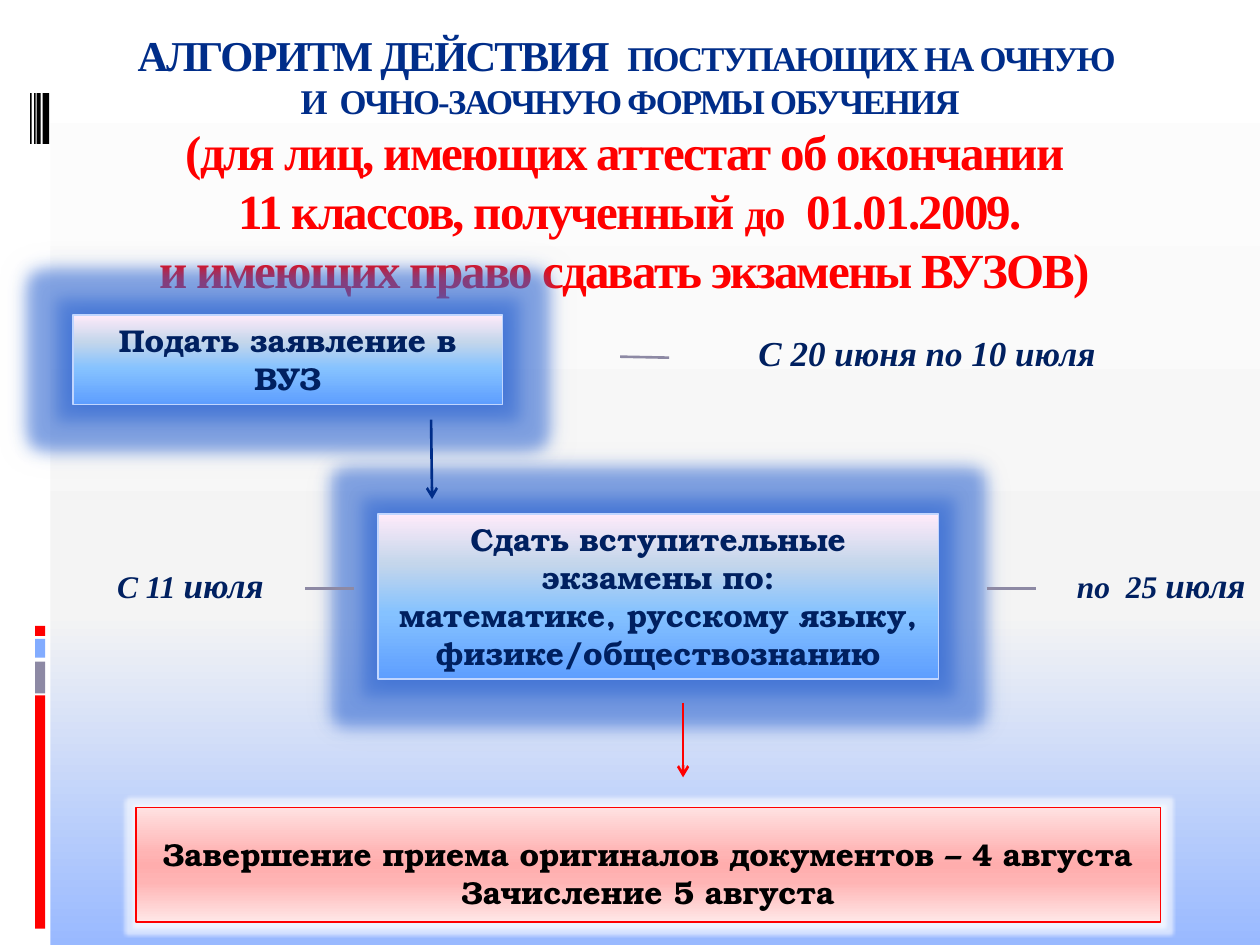
from typing import NamedTuple, Optional

from lxml import etree
from pptx import Presentation
from pptx import util as u
from pptx.dml.color import RGBColor
from pptx.enum import shapes, text
from pptx.oxml import ns

Cm, Pt = u.Cm, u.Pt
WHITE = RGBColor(0xFF, 0xFF, 0xFF)
BLACK = RGBColor(0, 0, 0)
RED = RGBColor(0xFF, 0, 0)
GREY = RGBColor(0x8D, 0x89, 0xA4)
SKY = RGBColor(0x82, 0xAC, 0xFF)
NAVY = RGBColor(0x00, 0x20, 0x60)
TITLE_BLUE = RGBColor(0x00, 0x2D, 0x89)
PALE_BLUE = RGBColor(0xC1, 0xD6, 0xFF)
GLOW_BLUE = RGBColor(0x33, 0x69, 0xD2)

PAGE_FADE = [(0, "FFFFFF"), (65, "F4F4F4"), (100, "99B9FF")]
BLUE_FADE = [(0, "FFEBFA"), (30, "C4D6EB"), (60, "85C2FF"), (100, "5E9EFF")]
RED_FADE = [(0, "FFE1E1"), (40, "FFB4B4"), (50, "FFADAD"), (65, "FFB4B4"), (100, "FFE7E7")]
SERIF, BOOK = "Times New Roman", "TeX Gyre Bonum"


class Span(NamedTuple):
    words: str
    size: float
    color: RGBColor = NAVY


class Bar(NamedTuple):
    left: float
    top: float
    width: float
    height: float
    color: RGBColor


class Step(NamedTuple):
    left: float
    top: float
    width: float
    height: float
    lines: list
    fade: list = BLUE_FADE
    border: RGBColor = PALE_BLUE
    ink: RGBColor = NAVY
    glow: tuple = (GLOW_BLUE, 0.62, 50)
    shade: Optional[RGBColor] = GLOW_BLUE
    top_inset: float = 0.1


class Link(NamedTuple):
    start: tuple
    end: tuple
    color: RGBColor = GREY
    arrow: bool = False


class Label(NamedTuple):
    left: float
    top: float
    width: float
    spans: list


BARS = [
    Bar(0, 0, 1.02, 19.05, WHITE),
    Bar(0.71, 14.02, 0.2, 4.7, RED),
    Bar(0.71, 13.34, 0.2, 0.64, GREY),
    Bar(0.71, 12.88, 0.2, 0.38, SKY),
    Bar(0.71, 12.62, 0.2, 0.2, RED),
] + [Bar(left, 1.88, width, 1.02, BLACK)
     for left, width in [(0.86, 0.13), (0.74, 0.08), (0.69, 0.03), (0.61, 0.03)]]

TITLE = [
    Span("АЛГОРИТМ ДЕЙСТВИЯ  ", 24.3, TITLE_BLUE),
    Span("ПОСТУПАЮЩИХ НА ОЧНУЮ \vИ  ОЧНО-ЗАОЧНУЮ ФОРМЫ ОБУЧЕНИЯ\v", 19.8, TITLE_BLUE),
    Span("(для лиц, имеющих аттестат об окончании \v11 классов, полученный ", 28, RED),
    Span("до", 24.3, RED),
    Span("  01.01.2009.\vи имеющих право сдавать экзамены ВУЗОВ) ", 28, RED),
]

STEPS = [
    Step(1.47, 6.35, 8.66, 1.8, ["Подать заявление в ВУЗ"]),
    Step(7.62, 10.36, 11.3, 3.33, ["Сдать вступительные экзамены по:",
                                   "математике, русскому языку, физике/обществознанию"]),
    Step(2.74, 16.28, 20.65, 2.31, ["Завершение приема оригиналов документов – 4 августа",
                                    "Зачисление 5 августа"],
         RED_FADE, RED, BLACK, (WHITE, 0.15, 60), None, 0.45),
]

LINKS = [
    Link((12.5, 7.19), (13.49, 7.21)),
    Link((8.69, 8.46), (8.71, 10.06), TITLE_BLUE, True),
    Link((6.15, 11.86), (7.14, 11.86)),
    Link((19.89, 11.86), (20.88, 11.86)),
    Link((13.77, 14.17), (13.77, 15.67), RED, True),
]

LABELS = [
    Label(15.04, 6.55, 7.54, [Span("С 20 июня по 10 июля", 20)]),
    Label(2.11, 11.23, 3.51, [Span("С 11 ", 18), Span("июля", 20)]),
    Label(21.46, 11.23, 3.94, [Span("по  25 ", 18), Span("июля", 20)]),
]


def add_node(parent, tag: str, **attributes):
    return etree.SubElement(parent, ns.qn(tag), {k: str(v) for k, v in attributes.items()})


def fade_fill(fill, holder, stops: list) -> None:
    """Give the holder element a top-to-bottom gradient with any number of stops."""
    fill.solid()
    solid = holder.find(ns.qn("a:solidFill"))
    gradient = etree.Element(ns.qn("a:gradFill"), rotWithShape="1")
    stop_list = add_node(gradient, "a:gsLst")
    for percent, color in stops:
        add_node(add_node(stop_list, "a:gs", pos=percent * 1000), "a:srgbClr", val=color)
    add_node(gradient, "a:lin", ang=5400000, scaled=0)
    holder.replace(solid, gradient)


def add_tint(effect, color: RGBColor, percent: int) -> None:
    tint = add_node(effect, "a:srgbClr", val=color)
    add_node(tint, "a:alpha", val=percent * 1000)


def write(para, spans: list, *, font: str, italic: bool = False,
          align=text.PP_ALIGN.LEFT, tracking: int = 0) -> None:
    para.alignment = align
    for item in spans:
        for index, piece in enumerate(item.words.split("\v")):
            if index:
                para.add_line_break()
            if not piece:
                continue
            span = para.add_run()
            span.text = piece
            span.font.name, span.font.size = font, Pt(item.size)
            span.font.bold, span.font.italic = True, italic
            span.font.color.rgb = item.color
            if tracking:
                span.font._element.set("spc", str(tracking))


def add_rectangle(page, left: float, top: float, width: float, height: float):
    box = page.shapes.add_shape(shapes.MSO_SHAPE.RECTANGLE,
                                Cm(left), Cm(top), Cm(width), Cm(height))
    box.shadow.inherit = False
    return box


def draw_bar(page, bar: Bar) -> None:
    box = add_rectangle(page, *bar[:4])
    box.fill.solid()
    box.fill.fore_color.rgb = bar.color
    box.line.fill.background()


def draw_title(page) -> None:
    box = page.shapes.add_textbox(0, Cm(0.58), Cm(25.4), Cm(5.6))
    frame = box.text_frame
    frame.word_wrap = True
    frame.margin_top = frame.margin_bottom = 0
    write(frame.paragraphs[0], TITLE, font=SERIF,
          align=text.PP_ALIGN.CENTER, tracking=-100)


def draw_step(page, step: Step) -> None:
    box = add_rectangle(page, *step[:4])
    properties = box._element.spPr
    fade_fill(box.fill, properties, step.fade)
    box.line.color.rgb = step.border
    box.line.width = Pt(0.75)
    effects = properties.find(ns.qn("a:effectLst"))
    color, radius, percent = step.glow
    add_tint(add_node(effects, "a:glow", rad=Cm(radius)), color, percent)
    if step.shade:
        add_tint(add_node(effects, "a:outerShdw", blurRad=Cm(0.4), dist=0), step.shade, 75)
    frame = box.text_frame
    frame.word_wrap = True
    frame.vertical_anchor = text.MSO_ANCHOR.MIDDLE
    frame.margin_top = Cm(step.top_inset)
    for index, line in enumerate(step.lines):
        para = frame.add_paragraph() if index else frame.paragraphs[0]
        write(para, [Span(line, 18, step.ink)], font=BOOK, align=text.PP_ALIGN.CENTER)


def draw_link(page, link: Link) -> None:
    line = page.shapes.add_connector(shapes.MSO_CONNECTOR.STRAIGHT,
                                     *map(Cm, link.start + link.end))
    line.line.color.rgb = link.color
    line.line.width = Pt(1.5)
    if link.arrow:
        add_node(line.line._get_or_add_ln(), "a:tailEnd", type="arrow")
    add_node(line._element.spPr, "a:effectLst")


def draw_label(page, label: Label) -> None:
    box = page.shapes.add_textbox(Cm(label.left), Cm(label.top), Cm(label.width), Cm(1.12))
    box.text_frame.word_wrap = False
    write(box.text_frame.paragraphs[0], label.spans, font=SERIF, italic=True)


def main() -> None:
    deck = Presentation()
    deck.slide_width, deck.slide_height = Cm(25.4), Cm(19.05)
    page = deck.slides.add_slide(deck.slide_layouts[6])
    backdrop = page.background.fill
    backdrop.solid()
    fade_fill(backdrop, page._element.cSld.find(".//" + ns.qn("p:bgPr")), PAGE_FADE)
    for bar in BARS:
        draw_bar(page, bar)
    draw_title(page)
    for step in STEPS:
        draw_step(page, step)
    for link in LINKS:
        draw_link(page, link)
    for label in LABELS:
        draw_label(page, label)
    deck.save("out.pptx")


if __name__ == "__main__":
    main()
